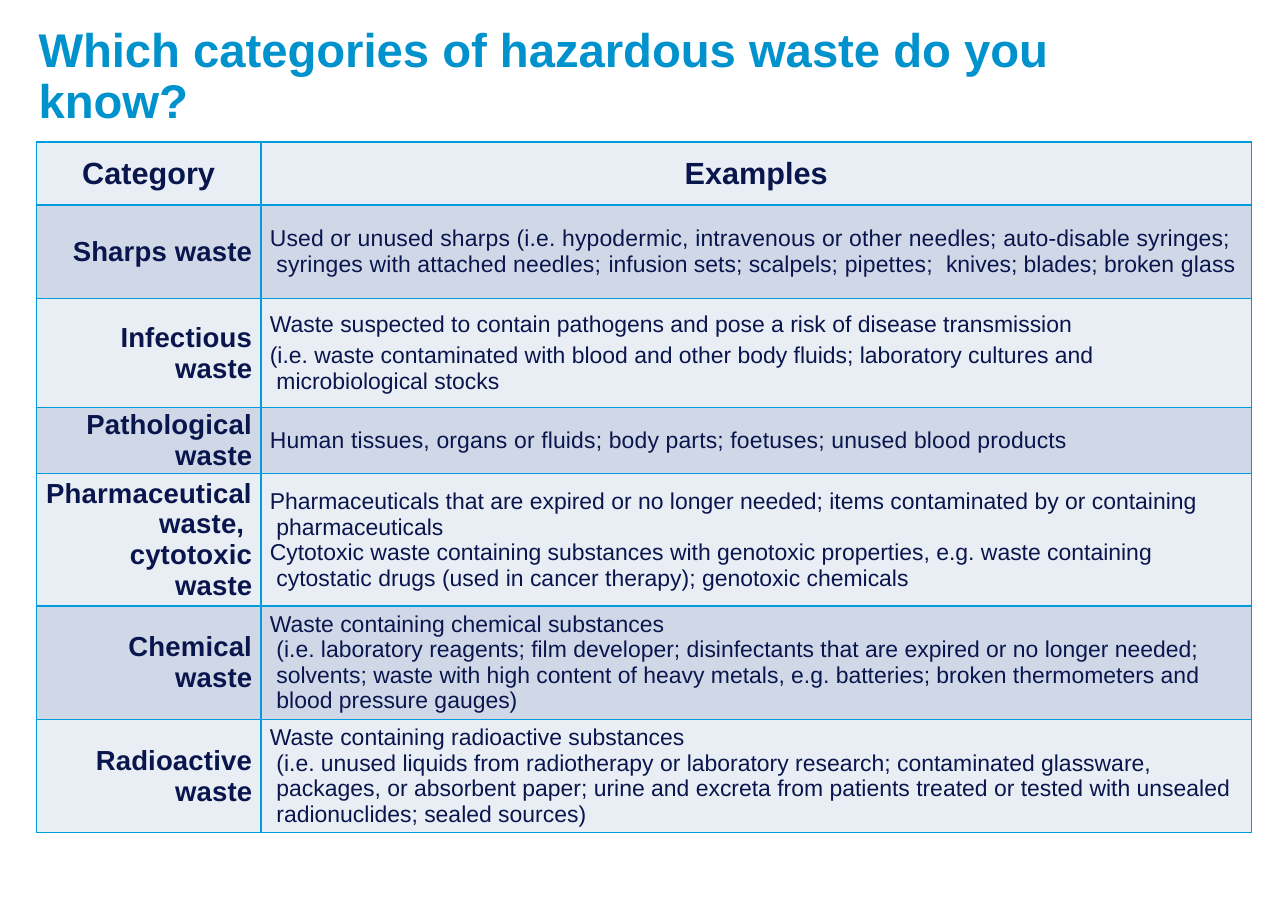
from dataclasses import dataclass
from lxml import etree
from pptx import Presentation
from pptx import util as u
from pptx.dml.color import RGBColor
from pptx.enum import text
from pptx.oxml import ns


@dataclass(frozen=True)
class Theme:
    font: str = "Arial"
    title: str = "0092CC"
    ink: str = "09164D"
    line: str = "009CDE"
    bands: tuple = ("E9EDF4", "D0D8E8")
    big: float = 30.9
    head: float = 20
    label: float = 18
    body: float = 15


def write(frame, words, size, color, font, bold=False, align="LEFT", track=0,
          after=0, hang=0, lead=None):
    """Lines are paragraphs, \\v breaks a line, and | turns the tracking on or off."""
    frame.word_wrap = True
    for i, line in enumerate(words.split("\n")):
        para = frame.add_paragraph() if i else frame.paragraphs[0]
        para.alignment = getattr(text.PP_ALIGN, align)
        para.space_after = u.Pt(after)
        if lead:
            para.line_spacing = lead
        if hang:
            props = para._p.get_or_add_pPr()
            props.set("marL", str(u.Inches(hang)))
            props.set("indent", str(-u.Inches(hang)))
        for j, part in enumerate(line.split("|")):
            for k, piece in enumerate(part.split("\v")):
                if k:
                    para.add_line_break()
                run = para.add_run()
                run.text = piece
                run.font.name, run.font.size, run.font.bold = font, u.Pt(size), bold
                run.font.color.rgb = RGBColor.from_string(color)
                run._r.get_or_add_rPr().set("spc", str(0 if j % 2 else track))


class Page:
    """A slide measured in percent of its width (columns) and height (rows)."""

    def __init__(self, deck, theme):
        self.deck, self.theme = deck, theme
        self.slide = deck.slides.add_slide(deck.slide_layouts[6])

    def col(self, n):
        return round(self.deck.slide_width * n / 100)

    def row(self, n):
        return round(self.deck.slide_height * n / 100)

    def title(self, words, left, top, wide, high):
        box = self.slide.shapes.add_textbox(
            self.col(left), self.row(top), self.col(wide), self.row(high))
        frame = box.text_frame
        frame.vertical_anchor = text.MSO_ANCHOR.BOTTOM
        frame.margin_left, frame.margin_right = u.Inches(0.02), u.Inches(0.5)
        frame.margin_top = frame.margin_bottom = 0
        write(frame, words, self.theme.big, self.theme.title, self.theme.font,
              bold=True, lead=0.9)

    def cell(self, cell, fill, side, edge):
        cell.fill.solid()
        cell.fill.fore_color.rgb = RGBColor.from_string(fill)
        cell.vertical_anchor = text.MSO_ANCHOR.MIDDLE
        cell.margin_left = cell.margin_right = u.Inches(side)
        cell.margin_top = cell.margin_bottom = u.Inches(edge)
        # Borders come before the fill in the cell's properties
        props = cell._tc.get_or_add_tcPr()
        for i, tag in enumerate(("a:lnL", "a:lnR", "a:lnT", "a:lnB")):
            line = etree.Element(ns.qn(tag), w=str(u.Pt(1)))
            solid = etree.SubElement(line, ns.qn("a:solidFill"))
            etree.SubElement(solid, ns.qn("a:srgbClr"), val=self.theme.line)
            props.insert(i, line)

    def table(self, rows, left, top, wides, highs):
        t = self.theme
        grid = self.slide.shapes.add_table(
            len(rows), len(wides), self.col(left), self.row(top),
            self.col(sum(wides)), self.row(sum(highs))).table
        for i, wide in enumerate(wides):
            grid.columns[i].width = self.col(wide)
        styles = (dict(size=t.label, bold=True, align="RIGHT", track=10, after=3.6),
                  dict(size=t.body, after=3.6, hang=0.06))
        for r, (high, row) in enumerate(zip(highs, rows)):
            grid.rows[r].height = self.row(high)
            for c, words in enumerate(row[:2]):
                cell = grid.cell(r, c)
                self.cell(cell, t.bands[r % 2], *((0.08, 0) if r else (0.11, 0.06)))
                style = dict(styles[c]) if r else dict(size=t.head, bold=True, align="CENTER")
                if c and r:
                    style.update(row[2] if len(row) > 2 else {})
                write(cell.text_frame, words, color=t.ink, font=t.font, **style)
        # Two lines of the medicine row stand close together
        grid.cell(4, 1).text_frame.paragraphs[0].space_after = u.Pt(0)


WIDE = dict(track=10)
ROWS = [
    ("Category", "Examples"),
    ("Sharps waste",
     "Used or unused sharps (i.e. hypodermic, intravenous or other needles; auto-disable "
     "syringes; syringes with attached needles; |infusion sets; scalpels;| pipettes; "
     "| knives; blades; broken| glass", WIDE),
    ("Infectious waste",
     "Waste suspected to contain pathogens and pose a risk of disease transmission\n"
     "(i.e. waste contaminated with blood and other body fluids; laboratory cultures and "
     "microbiological stocks"),
    ("Pathological waste",
     "Human tissues, organs or fluids; body parts; foetuses; unused blood products", WIDE),
    ("Pharmaceutical waste, \vcytotoxic waste",
     "Pharmaceuticals that are expired or no longer needed; items contaminated by or "
     "containing pharmaceuticals\n"
     "Cytotoxic waste containing substances with genotoxic properties, e.g. waste containing "
     "cytostatic drugs (used in cancer therapy); genotoxic chemicals"),
    ("Chemical waste",
     "Waste containing chemical substances \v(i.e. laboratory reagents; film developer; "
     "disinfectants that are expired or no longer needed; solvents; waste with high content "
     "of heavy metals, e.g. batteries; broken thermometers and blood pressure gauges)"),
    ("Radioactive waste",
     "Waste containing radioactive substances \v(i.e. unused liquids from radiotherapy or "
     "laboratory research; contaminated glassware, packages, or absorbent paper; urine and "
     "excreta from patients treated or tested with unsealed radionuclides; sealed sources)"),
]


def main():
    deck = Presentation()
    deck.slide_width, deck.slide_height = u.Inches(11.69), u.Inches(8.27)
    page = Page(deck, Theme())
    # Heading
    page.title("Which categories of hazardous waste do you know?", 2.82, 0, 94.35, 14.15)
    # Waste categories
    page.table(ROWS, 2.82, 15.6, (17.45, 76.9),
               (6.89, 10.28, 11.97, 7.13, 13.91, 12.45, 12.45))
    deck.save("out.pptx")


if __name__ == "__main__":
    main()
